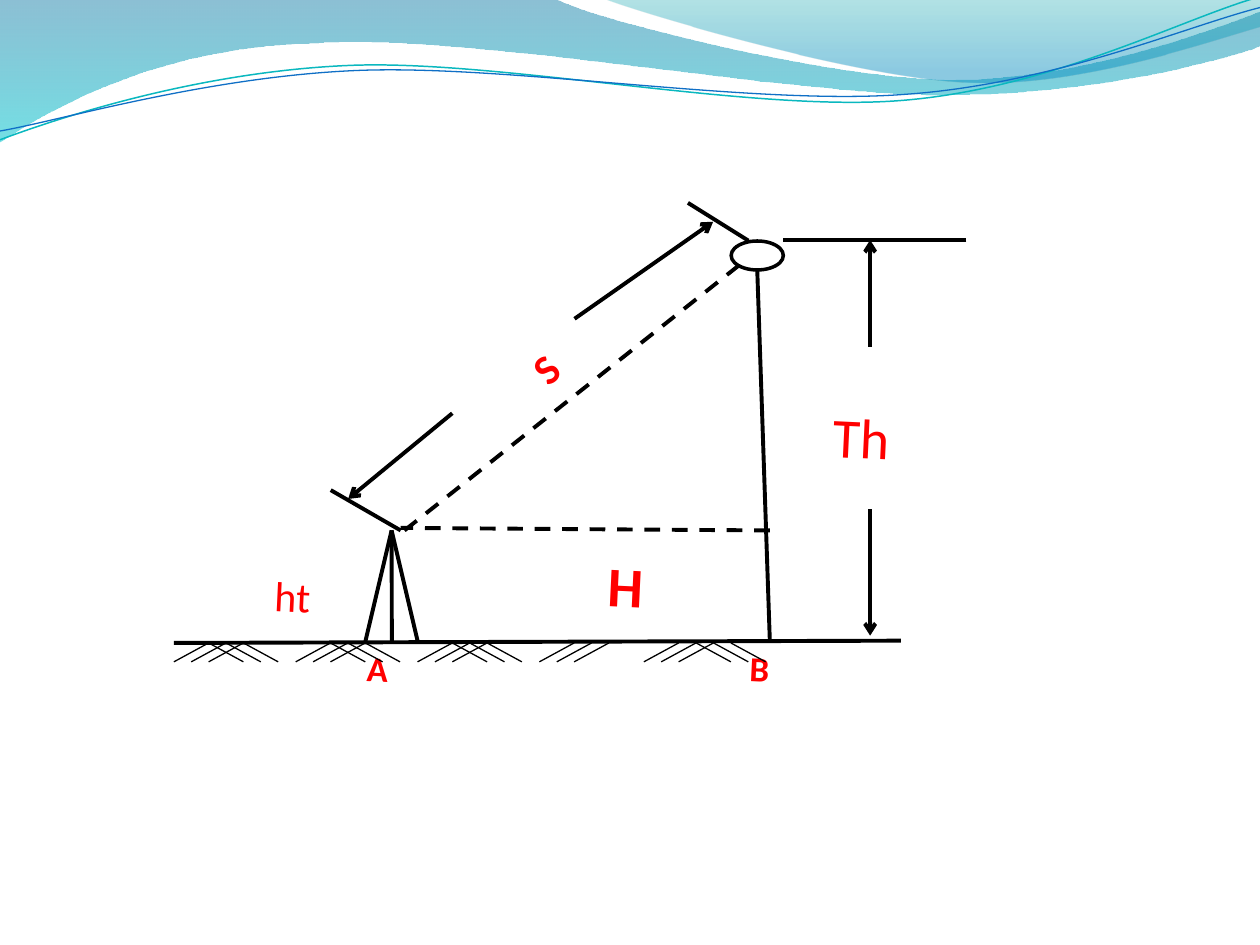
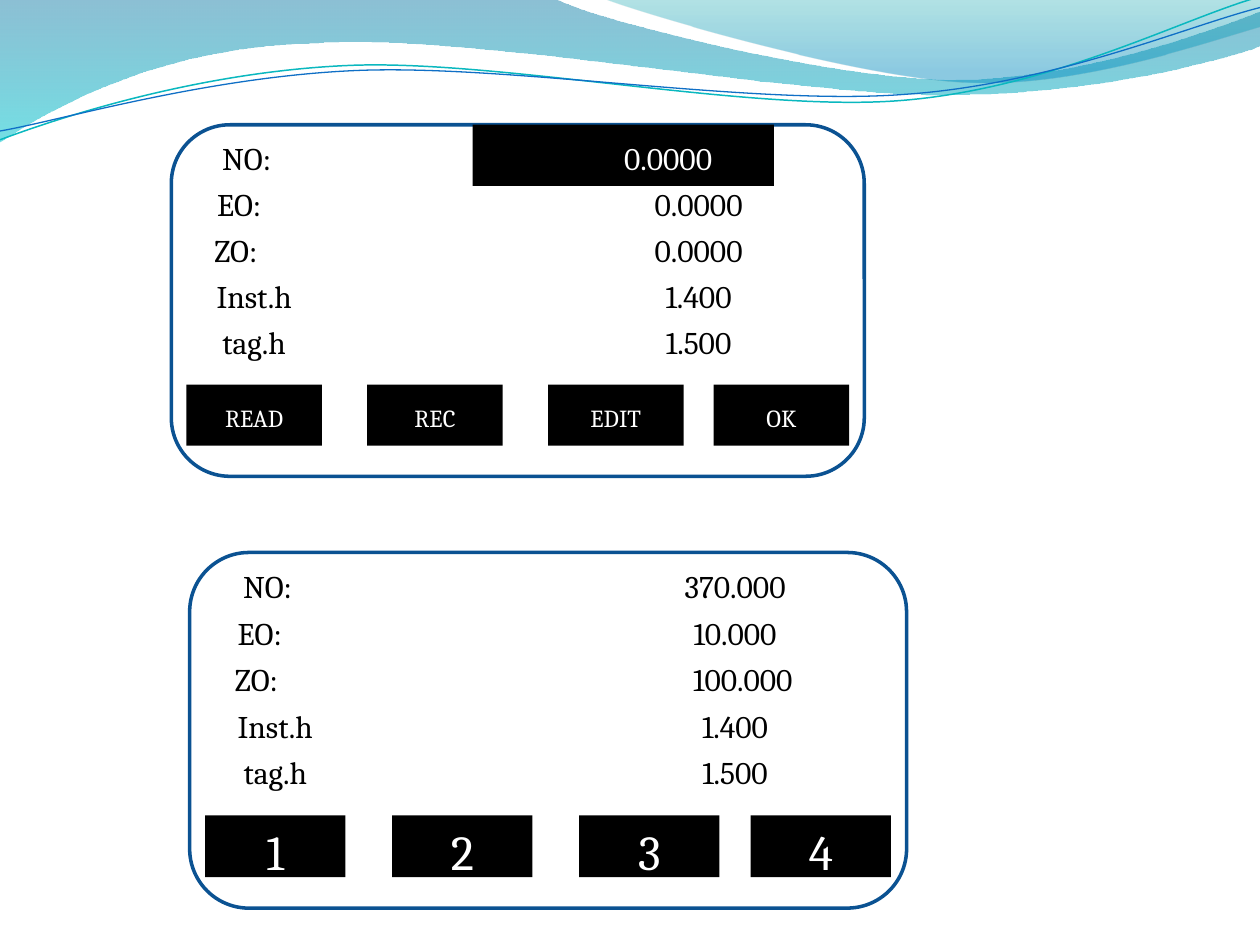
from dataclasses import dataclass

from lxml import etree
from pptx import Presentation
from pptx import util as u
from pptx.dml.color import RGBColor
from pptx.enum import dml, shapes, text
from pptx.oxml.ns import qn

COLUMNS, ROWS = 100, 75  # slide grid
PANEL_COLUMNS, PANEL_ROWS = 46, 23  # grid inside an instrument display


@dataclass(frozen=True)
class Theme:
    ink: str = "000000"
    paper: str = "FFFFFF"
    label: str = "FF0000"
    frame: str = "0B5292"
    teal_line: str = "0AB8BF"
    blue_line: str = "0F6FC6"
    # Gradient stops: position, colour, opacity in percent
    wide_wave: tuple = ((0, "0074A1", 45), (1, "00C6CF", 55))
    corner_wave: tuple = ((0, "00A1A9", 30), (0.8, "008BBF", 45))
    diagram_font: str = "Calibri"
    display_font: str = "Cambria"
    large: int = 32
    digit: int = 28
    medium: int = 24
    small: int = 20
    reading: int = 18
    button: int = 14
    heavy_line: float = 2.25
    frame_line: float = 2
    thin_line: float = 0.75


def write_text(shape, words, *, font, size, color, bold=False, centered=True,
               anchor=text.MSO_ANCHOR.MIDDLE, wrap=True, indent=0.1):
    frame = shape.text_frame
    frame.word_wrap = wrap
    frame.vertical_anchor = anchor
    frame.margin_left = u.Inches(indent)
    if not wrap:
        frame.auto_size = text.MSO_AUTO_SIZE.SHAPE_TO_FIT_TEXT
    paragraph = frame.paragraphs[0]
    paragraph.alignment = text.PP_ALIGN.CENTER if centered else text.PP_ALIGN.LEFT
    paragraph.line_spacing = 1.15
    paragraph.space_after = u.Pt(10)
    run = paragraph.add_run()
    run.text = words
    run.font.name = font
    run.font.size = u.Pt(size)
    run.font.bold = bold
    run.font.color.rgb = RGBColor.from_string(color)


class Deck:
    def __init__(self, theme):
        self.theme = theme
        self.presentation = Presentation()
        self.presentation.slide_width = u.Inches(10)
        self.presentation.slide_height = u.Inches(7.5)
        self.layout = self.presentation.slide_layouts[6]
        self.slide = None

    def add_slide(self):
        self.slide = self.presentation.slides.add_slide(self.layout)

    def place(self, column, row):
        return (round(column * self.presentation.slide_width / COLUMNS),
                round(row * self.presentation.slide_height / ROWS))

    def box(self, left, top, width, height):
        return *self.place(left, top), *self.place(width, height)

    def style_line(self, line, color, weight):
        line.color.rgb = RGBColor.from_string(color)
        line.width = u.Pt(weight)

    def line(self, start, end, weight=None, dashed=False, arrow=False):
        connector = self.slide.shapes.add_connector(
            shapes.MSO_CONNECTOR.STRAIGHT, *self.place(*start), *self.place(*end))
        self.style_line(connector.line, self.theme.ink, weight or self.theme.heavy_line)
        if dashed:
            connector.line.dash_style = dml.MSO_LINE.DASH
        properties = connector.element.spPr
        if arrow:
            etree.SubElement(properties.find(qn("a:ln")), qn("a:tailEnd"), type="arrow")
        etree.SubElement(properties, qn("a:effectLst"))

    def shape(self, kind, area, fill=None, line=None, weight=None):
        shape = self.slide.shapes.add_shape(kind, *self.box(*area))
        return self.finish(shape, fill, line, weight)

    def finish(self, shape, fill=None, line=None, weight=None):
        shape.shadow.inherit = False
        if fill:
            shape.fill.solid()
            shape.fill.fore_color.rgb = RGBColor.from_string(fill)
        else:
            shape.fill.background()
        if line:
            self.style_line(shape.line, line, weight)
        else:
            shape.line.fill.background()
        return shape

    def freeform(self, start, segments, closed=False, line=None, weight=None):
        """Draw segments: one point is a straight line, three points a curve."""
        builder = self.slide.shapes.build_freeform(*self.place(*start))
        builder.add_line_segments(
            [self.place(*point) for segment in segments for point in segment], close=closed)
        shape = builder.convert_to_shape()
        outline = next(shape.element.spPr.iter(qn("a:path")))
        steps = iter(outline.findall(qn("a:lnTo")))
        for segment in segments:
            parts = [next(steps) for _ in segment]
            if len(parts) == 3:
                curve = etree.SubElement(outline, qn("a:cubicBezTo"))
                parts[0].addprevious(curve)
                for part in parts:
                    curve.append(part[0])
                    outline.remove(part)
        return self.finish(shape, line=line, weight=weight)

    def wave(self, start, segments, stops):
        shape = self.freeform(start, segments, closed=True)
        shape.fill.gradient()
        shape.fill.gradient_angle = 270
        for stop, (position, color, _) in zip(shape.fill.gradient_stops, stops):
            stop.position = position
            stop.color.rgb = RGBColor.from_string(color)
        colors = shape.element.spPr.iter(qn("a:srgbClr"))
        for color, (_, _, opacity) in zip(list(colors), stops):
            etree.SubElement(color, qn("a:alpha"), val=str(opacity * 1000))
        return shape

    def text_box(self, words, area, rotation=0, **text_format):
        shape = self.slide.shapes.add_textbox(*self.box(*area))
        write_text(shape, words, **text_format)
        shape.rotation = rotation

    def button(self, words, area, **text_format):
        shape = self.shape(shapes.MSO_SHAPE.RECTANGLE, area, fill=self.theme.ink)
        write_text(shape, words, font=self.theme.display_font,
                   color=self.theme.paper, **text_format)

    def share_waves(self):
        """Draw the header waves and move them to the layout of every slide."""
        theme = self.theme
        wide = [[(44, -0.1)],
                [(47.6, 1.7), (66.4, 6.3), (75.8, 6.3)],
                [(85.3, 6.3), (95.8, 2.6), (100, 0.9)],
                [(100.1, 3.6)],
                [(98.3, 4.4), (87, 7.6), (74.6, 7.5)],
                [(62.2, 7.5), (38.2, 2.8), (25.7, 3.4)],
                [(12.9, 3.6), (4.6, 8.3), (-0.1, 11.3)],
                [(0, 0)]]
        corner = [[(50.9, 1.1), (68.2, 6.2), (76.9, 6.5)],
                  [(85.6, 6.9), (96.1, 3.2), (100, 2.1)],
                  [(100, 0)],
                  [(47.9, -0.1)]]
        teal = [[(4.8, 9.3), (15.8, 5.7), (27.7, 5.2)],
                [(39.5, 4.7), (59.3, 8.9), (71.3, 8)],
                [(83.3, 7.1), (93.8, 1.5), (99.8, -0.2)]]
        blue = [[(4.7, 9.6), (16.4, 6.1), (28.3, 5.6)],
                [(40.3, 5.1), (59.7, 8.4), (71.7, 7.5)],
                [(83.6, 6.7), (94.1, 2.1), (100, 0.6)]]
        waves = [
            self.wave((0, 0), wide, theme.wide_wave),
            self.wave((47.9, -0.1), corner, theme.corner_wave),
            self.freeform((0, 11.1), teal, line=theme.teal_line, weight=0.85),
            self.freeform((0, 10.4), blue, line=theme.blue_line, weight=theme.thin_line),
        ]
        layout_tree = self.layout.shapes.element
        for placeholder in list(self.layout.placeholders):
            layout_tree.remove(placeholder.element)
        for wave in waves:
            layout_tree.append(wave.element)

    def display(self, frame, readings, buttons, button_size):
        """Draw an instrument display with readings above a row of buttons."""
        theme = self.theme
        left, top, width, height = frame
        column, row = width / PANEL_COLUMNS, height / PANEL_ROWS

        def cell(start, line, span):
            return left + start * column, top + line * row, span * column, 4 * row

        self.shape(shapes.MSO_SHAPE.ROUNDED_RECTANGLE, frame,
                   line=theme.frame, weight=theme.frame_line)
        labels = [("NO:", 1, 8), ("EO:", 1, 7), ("ZO: ", 0, 9),
                  ("Inst.h", 0, 11), ("tag.h", 0, 11)]
        style = dict(font=theme.display_font, size=theme.reading, color=theme.ink)
        for index, (label, reading) in enumerate(zip(labels, readings)):
            name, start, span = label
            self.text_box(name, cell(start, 3 * index, span), **style)
            value, start, span, selected = reading
            area = cell(start, 3 * index, span)
            if selected:
                self.button(value, area, size=theme.reading, indent=0.81)
            else:
                self.text_box(value, area, **style)
        for name, start in zip(buttons, (1, 13, 25, 36)):
            self.button(name, cell(start, 17, 9), size=button_size)


def draw_survey(deck):
    theme = deck.theme
    # Sight line, target pole and horizontal distance
    deck.line((32.1, 42.1), (58.6, 21.1), dashed=True)
    deck.line((61.1, 50.9), (60.1, 21.4))
    deck.line((61.1, 42.1), (31.8, 41.9), dashed=True)
    deck.shape(shapes.MSO_SHAPE.OVAL, (58.03, 19.13, 4.14, 2.3),
               line=theme.ink, weight=theme.frame_line)

    # Tripod
    for foot in (31.1, 33.15, 29):
        deck.line((31.08, 42.1), (foot, 50.9))

    # Dimension ticks and arrows
    for start, end in [((54.6, 16.1), (59.4, 19.1)), ((26.25, 38.9), (31.8, 42.1)),
                       ((76.7, 19.05), (62.15, 19.05))]:
        deck.line(start, end)
    for start, end in [((69.06, 27.5), (69.06, 19.05)), ((69.06, 40.4), (69.06, 50.45)),
                       ((35.9, 32.8), (27.63, 39.6)), ((45.6, 25.3), (56.6, 17.6))]:
        deck.line(start, end, arrow=True)

    # Labels
    for words, area, rotation, size, bold, centered in [
            ("S", (42.5, 25.7, 4, 9.9), 318.1, theme.medium, True, True),
            ("Th", (65.05, 30.7, 7.3, 10.8), 2.8, theme.large, False, False),
            ("H", (46.85, 42.45, 5.4, 12.2), 2.8, theme.large, True, True),
            ("A", (27.8, 50.35, 4.2, 8.7), 2.8, theme.small, True, True),
            ("B", (58.2, 50.35, 4, 8.7), 2.8, theme.small, True, True),
            ("ht", (20.75, 44.2, 5.5, 8.9), 2.8, theme.medium, False, False)]:
        deck.text_box(words, area, rotation, font=theme.diagram_font, size=size,
                      color=theme.label, bold=bold, centered=centered,
                      anchor=text.MSO_ANCHOR.TOP, wrap=False)

    # Ground line with hatching in groups of three strokes
    deck.line((71.5, 50.85), (13.8, 51.03))
    left_leaning = (16.56, 26.23, 35.9, 45.57, 53.86)
    right_leaning = (16.56, 26.23, 35.9, 55.25)
    for groups, run in ((left_leaning, -2.76), (right_leaning, 2.76)):
        for group in groups:
            for stroke in range(3):
                top = group + 1.38 * stroke
                deck.line((top, 51.03), (top + run, 52.53), weight=theme.thin_line)


def draw_displays(deck):
    heights = [("1.400", 29, 12, False), ("1.500", 29, 12, False)]
    deck.display((13.6, 9.9, 55, 27.9),
                 [("0.0000", 20, 20, True), ("0.0000", 25, 20, False),
                  ("0.0000", 29, 12, False)] + heights,
                 ("READ", "REC", "EDIT", "OK"), deck.theme.button)
    deck.display((15.05, 43.85, 56.9, 28.23),
                 [("370.000", 25, 20, False), ("10.000", 25, 20, False),
                  ("100.000", 29, 13, False)] + heights,
                 ("1", "2", "3", "4"), deck.theme.digit)


def main():
    deck = Deck(Theme())
    deck.add_slide()
    deck.share_waves()
    draw_survey(deck)
    deck.add_slide()
    draw_displays(deck)
    deck.presentation.save("out.pptx")


if __name__ == "__main__":
    main()
